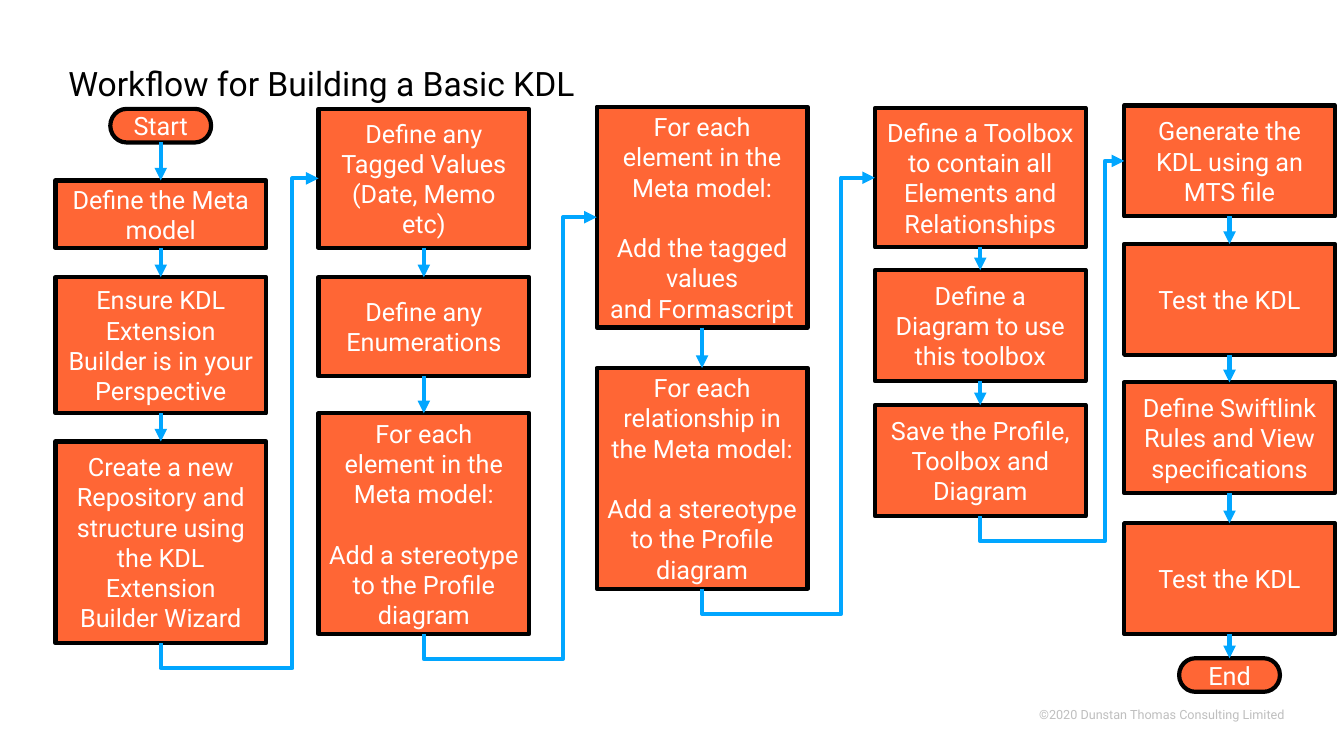
from itertools import pairwise

from lxml.etree import SubElement
from pptx import Presentation
from pptx.dml.color import RGBColor
from pptx.enum.shapes import MSO_CONNECTOR as Link, MSO_SHAPE as Shape
from pptx.enum.text import MSO_ANCHOR as Anchor, PP_ALIGN as Align
from pptx.oxml.ns import qn
from pptx.util import Pt

CELL = 304800
GRID_COLUMNS, GRID_ROWS = 40, 22.5
BOX_WIDTH = 6.27
TERMINAL = (3, 1)
DROP = 0.75
BLANK_LINE = 21.6
TOP, LEFT, BOTTOM = 0, 1, 2

COLORS = {
    "box": "FF6635",
    "outline": "000000",
    "arrow": "01A6FF",
    "label": "FFFFFF",
    "title": "000000",
    "footer": "BFBFBF",
}
LABEL = {"size": 18, "color": "label", "align": Align.CENTER}
TITLE = {"size": 24, "color": "title", "align": Align.LEFT, "line_spacing": 0.9}
FOOTER = {"size": 9, "color": "footer", "align": Align.RIGHT}

STEREOTYPE = "Add a stereotype to the Profile diagram"
WORKFLOW = [
    (1.65, [
        (3.24, None, "Start"),
        (5.37, 2.01, "Define the Meta model"),
        (8.25, 4.05, "Ensure KDL Extension Builder is in your Perspective"),
        (13.14, 6, "Create a new Repository and structure using the KDL Extension Builder Wizard"),
    ]),
    (9.48, [
        (3.24, 4.14, "Define any Tagged Values (Date, Memo etc)"),
        (8.25, 2.95, "Define any Enumerations"),
        (12.3, 6.57, f"For each element in the Meta model:\n\n{STEREOTYPE}"),
    ]),
    (17.76, [
        (3.18, 6.57, "For each element in the Meta model:\n\nAdd the tagged values\nand Formascript"),
        (10.95, 6.57, f"For each relationship in the Meta model:\n\n{STEREOTYPE}"),
    ]),
    (26.04, [
        (3.22, 4.14, "Define a Toolbox to contain all Elements and Relationships"),
        (8.04, 3.3, "Define a Diagram to use this toolbox"),
        (12.06, 3.3, "Save the Profile, Toolbox and Diagram"),
    ]),
    (33.46, [
        (3.14, 3.3, "Generate the KDL using an MTS file"),
        (7.26, 3.3, "Test the KDL"),
        (11.38, 3.3, "Define Swiftlink Rules and View specifications"),
        (15.57, 3.3, "Test the KDL"),
        (19.59, None, "End"),
    ]),
]


def cells(*counts):
    return [round(count * CELL) for count in counts]


def color(name):
    return RGBColor.from_string(COLORS[name])


def write(frame, text, style):
    frame.word_wrap = True
    gap = False
    fresh = True
    for line in text.split("\n"):
        if not line:
            gap = True
            continue
        para = frame.paragraphs[0] if fresh else frame.add_paragraph()
        para.alignment = style["align"]
        if "line_spacing" in style:
            para.line_spacing = style["line_spacing"]
        if gap:
            para.space_before = Pt(BLANK_LINE)
        span = para.add_run()
        span.text = line
        for name, value in {"name": "Roboto", "size": Pt(style["size"])}.items():
            setattr(span.font, name, value)
        span.font.color.rgb = color(style["color"])
        gap = fresh = False


def add_text(page, place, text, style, margins):
    box = page.shapes.add_textbox(*cells(*place))
    for side, value in margins.items():
        setattr(box.text_frame, f"margin_{side}", value)
    write(box.text_frame, text, style)


def add_step(page, left, top, height, text):
    if height is None:
        width, height = TERMINAL
        kind = Shape.FLOWCHART_TERMINATOR
        left += (BOX_WIDTH - width) / 2
    else:
        width, kind = BOX_WIDTH, Shape.FLOWCHART_PROCESS
    step = page.shapes.add_shape(kind, *cells(left, top, width, height))
    step.shadow.inherit = False
    step.fill.solid()
    step.fill.fore_color.rgb = color("box")
    step.line.color.rgb = color("outline")
    step.line.width = Pt(3)
    step.text_frame.vertical_anchor = Anchor.MIDDLE
    write(step.text_frame, text, LABEL)
    return step


def add_arrow(page, source, target, kind, site):
    arrow = page.shapes.add_connector(kind, 0, 0, 0, 0)
    arrow.begin_connect(source, BOTTOM)
    arrow.end_connect(target, site)
    arrow.line.color.rgb = color("arrow")
    arrow.line.width = Pt(3)
    SubElement(arrow.line._get_or_add_ln(), qn("a:tailEnd"), type="triangle")
    SubElement(arrow._element.spPr, qn("a:effectLst"))
    return arrow


def add_column_jump(page, source, target):
    arrow = add_arrow(page, source, target, Link.ELBOW, LEFT)
    start_x, start_y = source.left + source.width // 2, source.top + source.height
    end_x, end_y = target.left, target.top + target.height // 2
    rise, run = start_y - end_y, end_x - start_x
    frame = {
        "left": (start_x + end_x - rise) // 2,
        "top": (start_y + end_y - run) // 2,
        "width": rise,
        "height": run,
    }
    for name, value in frame.items():
        setattr(arrow, name, value)
    properties = arrow._element.spPr
    for name, value in {"rot": "5400000", "flipH": "1", "flipV": "1"}.items():
        properties.find(qn("a:xfrm")).set(name, value)
    lane = (source.left + source.width + end_x) / 2 - start_x
    geometry = properties.find(qn("a:prstGeom"))
    geometry.set("prst", "bentConnector4")
    guides = geometry.find(qn("a:avLst"))
    for name, share in {"adj1": -DROP * CELL / rise, "adj2": lane / run}.items():
        SubElement(guides, qn("a:gd"), name=name, fmla=f"val {round(share * 100000)}")


def main():
    deck = Presentation()
    deck.slide_width, deck.slide_height = cells(GRID_COLUMNS, GRID_ROWS)
    page = deck.slides.add_slide(deck.slide_layouts[6])
    add_text(page, (23.25, 20.88, 14.97, 0.75), "©2020 Dunstan Thomas Consulting Limited",
             FOOTER, {"left": 0, "right": 0})
    add_text(page, (1.74, 1.86, 36.18, 1.53), "Workflow for Building a Basic KDL", TITLE, {})
    columns = [[add_step(page, left, *step) for step in steps] for left, steps in WORKFLOW]
    for column in columns:
        for source, target in pairwise(column):
            add_arrow(page, source, target, Link.STRAIGHT, TOP)
    for before, after in pairwise(columns):
        add_column_jump(page, before[-1], after[0])
    deck.save("out.pptx")


if __name__ == "__main__":
    main()
